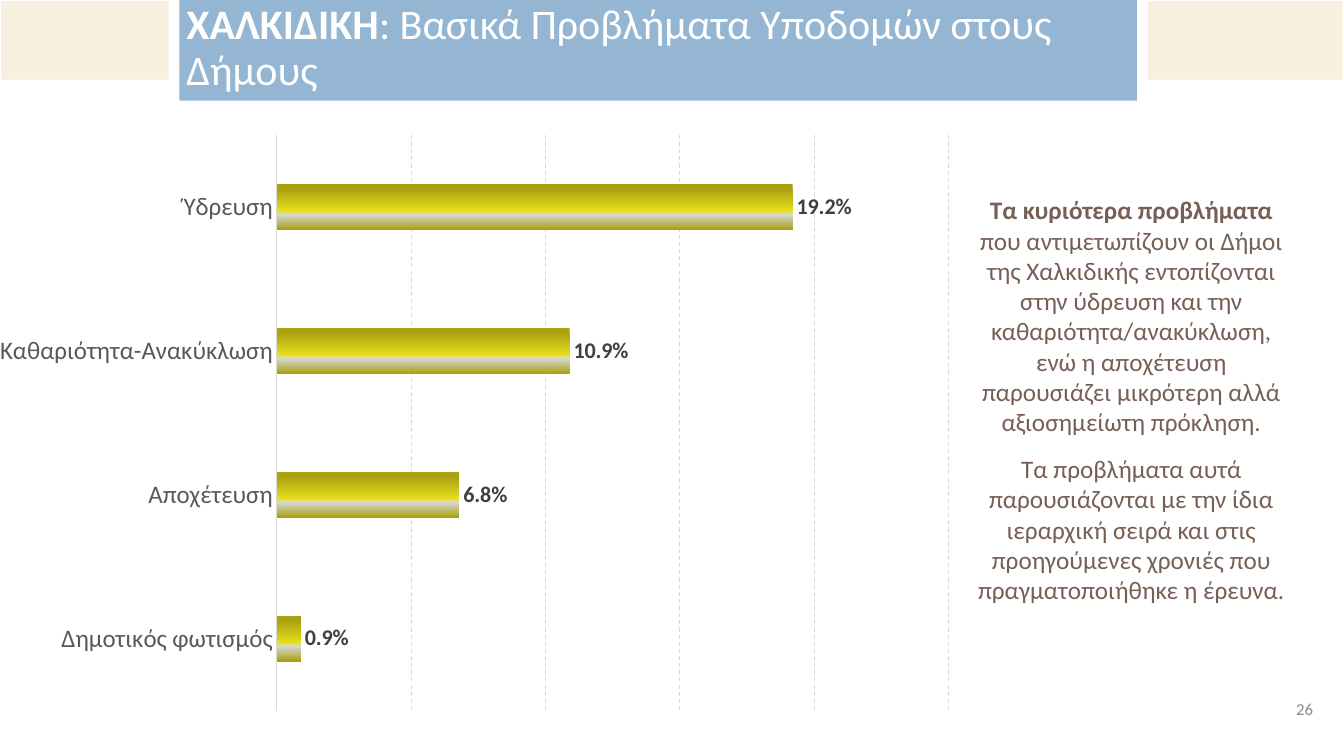
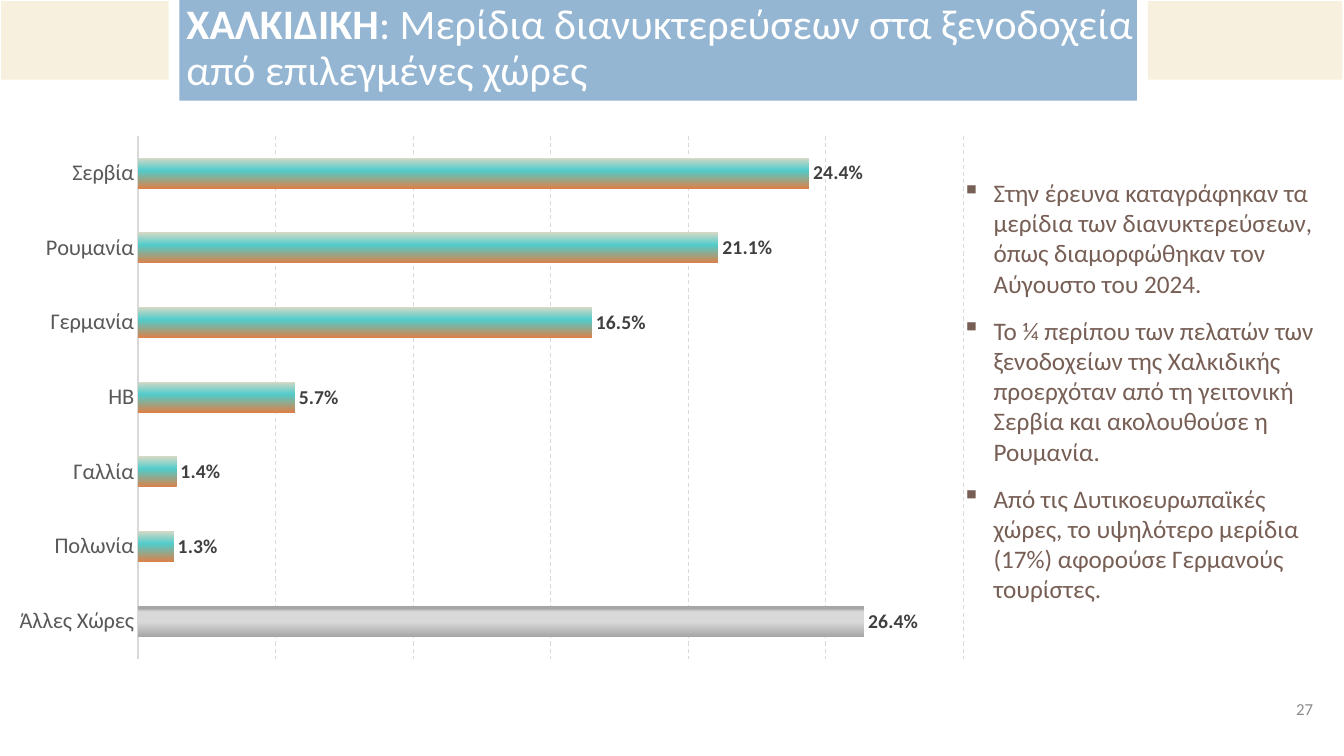
from dataclasses import dataclass

from lxml import etree
from pptx import Presentation
from pptx.chart import data
from pptx.dml.color import RGBColor
from pptx.enum import chart as ch, dml, shapes, text
from pptx.oxml.ns import qn
from pptx.util import Cm, Pt


@dataclass(frozen=True)
class Theme:
    font: str = "Calibri"
    white: str = "FFFFFF"
    cream: str = "F7F0DE"
    blue: str = "94B6D2"
    brown: str = "775F55"
    grey: str = "8C8C8C"
    label: str = "404040"
    axis: str = "595959"
    grid: str = "D9D9D9"
    title: int = 30
    body: int = 18
    number: int = 12
    # Bar gradients: stops as (percent, colour), then the angle
    olive: tuple = (((10, "A8A110"), (61, "EAE01E"), (66, "D9D9D9"), (100, "A8A110")), 270)
    teal: tuple = (((0, "DD8047"), (59, "51CCCB"), (100, "D6D9C6")), 90)
    steel: tuple = (((9, "A6A6A6"), (20, "D9D9D9"), (52, "D9D9D9"), (100, "A6A6A6")), 270)


theme = Theme()

bands = (
    (28.93, 0.03, 4.9, 1.98, theme.cream),
    (4.52, 0, 24.13, 2.54, theme.blue),
    (0.03, 0.03, 4.22, 1.98, theme.cream),
)

pages = (
    dict(
        number=26,
        title=": Βασικά Προβλήματα Υποδομών στους Δήμους",
        chart=(0, 3.25, 25.96, 15.11),
        bars=(
            ("Δημοτικός φωτισμός", 0.009),
            ("Αποχέτευση", 0.068),
            ("Καθαριότητα-Ανακύκλωση", 0.109),
            ("Ύδρευση", 0.192),
        ),
        top=0.25, gap=217, overlap=13, names=18, values=16,
        fill=theme.olive, marked={},
        plot=dict(x=0.26, y=0.01, w=0.66, h=0.96),
        box=(24.23, 4.78, 8.56, 10.69),
        bullet=None,
        body=(
            ("Τα κυριότερα προβλήματα ",
             "που αντιμετωπίζουν οι Δήμοι της Χαλκιδικής εντοπίζονται στην ύδρευση "
             "και την καθαριότητα/ανακύκλωση, ενώ η αποχέτευση παρουσιάζει μικρότερη "
             "αλλά αξιοσημείωτη πρόκληση."),
            ("", "Τα προβλήματα αυτά παρουσιάζονται με την ίδια ιεραρχική σειρά και "
             "στις προηγούμενες χρονιές που πραγματοποιήθηκε η έρευνα."),
        ),
    ),
    dict(
        number=27,
        title=": Μερίδια διανυκτερεύσεων στα ξενοδοχεία από επιλεγμένες χώρες",
        chart=(0, 3.15, 24.77, 13.72),
        bars=(
            ("Άλλες Χώρες", 0.264),
            ("Πολωνία", 0.013),
            ("Γαλλία", 0.014),
            ("ΗΒ", 0.057),
            ("Γερμανία", 0.165),
            ("Ρουμανία", 0.211),
            ("Σερβία", 0.244),
        ),
        top=0.3, gap=140, overlap=6, names=16, values=14,
        fill=theme.teal, marked={0: theme.steel},
        plot=None,
        box=(23.95, 4.34, 9.93, 11.13),
        bullet="▪",
        body=(
            ("", "Στην έρευνα καταγράφηκαν τα μερίδια των διανυκτερεύσεων, όπως "
             "διαμορφώθηκαν τον Αύγουστο του 2024."),
            ("", "Το ¼ περίπου των πελατών των ξενοδοχείων της Χαλκιδικής προερχόταν "
             "από τη γειτονική Σερβία και ακολουθούσε η Ρουμανία."),
            ("", "Από τις Δυτικοευρωπαϊκές χώρες, το υψηλότερο μερίδια (17%) αφορούσε "
             "Γερμανούς τουρίστες."),
        ),
    ),
)


def style(font, size, color, bold=None):
    font.name, font.size, font.bold = theme.font, Pt(size), bold
    font.color.rgb = RGBColor.from_string(color)


def shade(fill, stops, angle):
    """Fill with a gradient of any number of stops."""
    fill.gradient()
    fill.gradient_angle = angle
    ramp = fill._xPr.find(qn("a:gradFill")).find(qn("a:gsLst"))
    for old in list(ramp):
        ramp.remove(old)
    for pos, color in stops:
        stop = etree.SubElement(ramp, qn("a:gs"), pos=str(pos * 1000))
        etree.SubElement(stop, qn("a:srgbClr"), val=color)


prs = Presentation()
prs.slide_width, prs.slide_height = Cm(33.87), Cm(19.05)

for page in pages:
    slide = prs.slides.add_slide(prs.slide_layouts[6])

    # Header bands
    for *place, color in bands:
        band = slide.shapes.add_shape(shapes.MSO_SHAPE.RECTANGLE, *map(Cm, place))
        band.shadow.inherit = False
        band.fill.solid()
        band.fill.fore_color.rgb = RGBColor.from_string(color)
        band.line.fill.background()

    # Page number
    frame = slide.shapes.add_textbox(Cm(32.23), Cm(17.35), Cm(1.3), Cm(1.02)).text_frame
    frame.word_wrap = True
    frame.vertical_anchor = text.MSO_ANCHOR.MIDDLE
    par = frame.paragraphs[0]
    par.text = str(page["number"])
    par.alignment = text.PP_ALIGN.CENTER
    style(par.font, theme.number, theme.grey)

    # Title
    frame = slide.shapes.add_textbox(Cm(4.45), 0, Cm(24.77), Cm(2.46)).text_frame
    frame.word_wrap = True
    frame.vertical_anchor = text.MSO_ANCHOR.MIDDLE
    par = frame.paragraphs[0]
    par.line_spacing = 0.9
    style(par.font, theme.title, theme.white)
    for words, bold in (("ΧΑΛΚΙΔΙΚΗ", True), (page["title"], False)):
        run = par.add_run()
        run.text = words
        style(run.font, theme.title, theme.white, bold)

    # Bar chart
    table = data.CategoryChartData(number_format="0.0%")
    table.categories = [name for name, _ in page["bars"]]
    table.add_series("Series 1", [share for _, share in page["bars"]])
    chart = slide.shapes.add_chart(
        ch.XL_CHART_TYPE.BAR_CLUSTERED, *map(Cm, page["chart"]), table).chart
    chart.has_legend = chart.has_title = False
    chart.font.name, chart.font.size = theme.font, Pt(10)

    axis = chart.category_axis
    axis.major_tick_mark = axis.minor_tick_mark = ch.XL_TICK_MARK.NONE
    style(axis.tick_labels.font, page["names"], theme.axis)
    scale = chart.value_axis
    scale.visible = False
    scale.minimum_scale, scale.maximum_scale, scale.major_unit = 0, page["top"], 0.05
    grid = scale.major_gridlines.format.line
    for line in (axis.format.line, grid):
        line.color.rgb = RGBColor.from_string(theme.grid)
        line.width = Pt(0.75)
    grid.dash_style = dml.MSO_LINE.DASH

    plot = chart.plots[0]
    plot.gap_width, plot.overlap = page["gap"], page["overlap"]
    plot.vary_by_categories = False
    plot.has_data_labels = True
    labels = plot.data_labels
    labels.show_value = True
    labels.number_format, labels.number_format_is_linked = "0.0%", False
    labels.position = ch.XL_LABEL_POSITION.OUTSIDE_END
    style(labels.font, page["values"], theme.label, True)

    series = plot.series[0]
    series.invert_if_negative = False
    shade(series.format.fill, *page["fill"])
    for index, look in page["marked"].items():
        shade(series.points[index].format.fill, *look)

    if page["plot"]:
        area = chart._chartSpace.chart.plotArea
        layout = area.find(qn("c:layout"))
        if layout is None:
            layout = etree.Element(qn("c:layout"))
            area.insert(0, layout)
        manual = etree.SubElement(layout, qn("c:manualLayout"))
        modes = dict(layoutTarget="inner", xMode="edge", yMode="edge")
        for tag, value in (modes | page["plot"]).items():
            etree.SubElement(manual, qn("c:" + tag), val=str(value))

    # Comments beside the chart
    frame = slide.shapes.add_textbox(*map(Cm, page["box"])).text_frame
    frame.word_wrap = True
    for index, (lead, rest) in enumerate(page["body"]):
        par = frame.add_paragraph() if index else frame.paragraphs[0]
        if index:
            par.space_before = Pt(12)
        if page["bullet"]:
            props = par._p.get_or_add_pPr()
            props.set("marL", str(Cm(0.84)))
            props.set("indent", str(Cm(-0.79)))
            etree.SubElement(props, qn("a:buChar"), char=page["bullet"])
        else:
            par.alignment = text.PP_ALIGN.CENTER
        style(par.font, theme.body, theme.brown)
        if lead:
            run = par.add_run()
            run.text = lead
            style(run.font, theme.body, theme.brown, True)
        run = par.add_run()
        run.text = rest
        style(run.font, theme.body, theme.brown)

prs.save("out.pptx")
